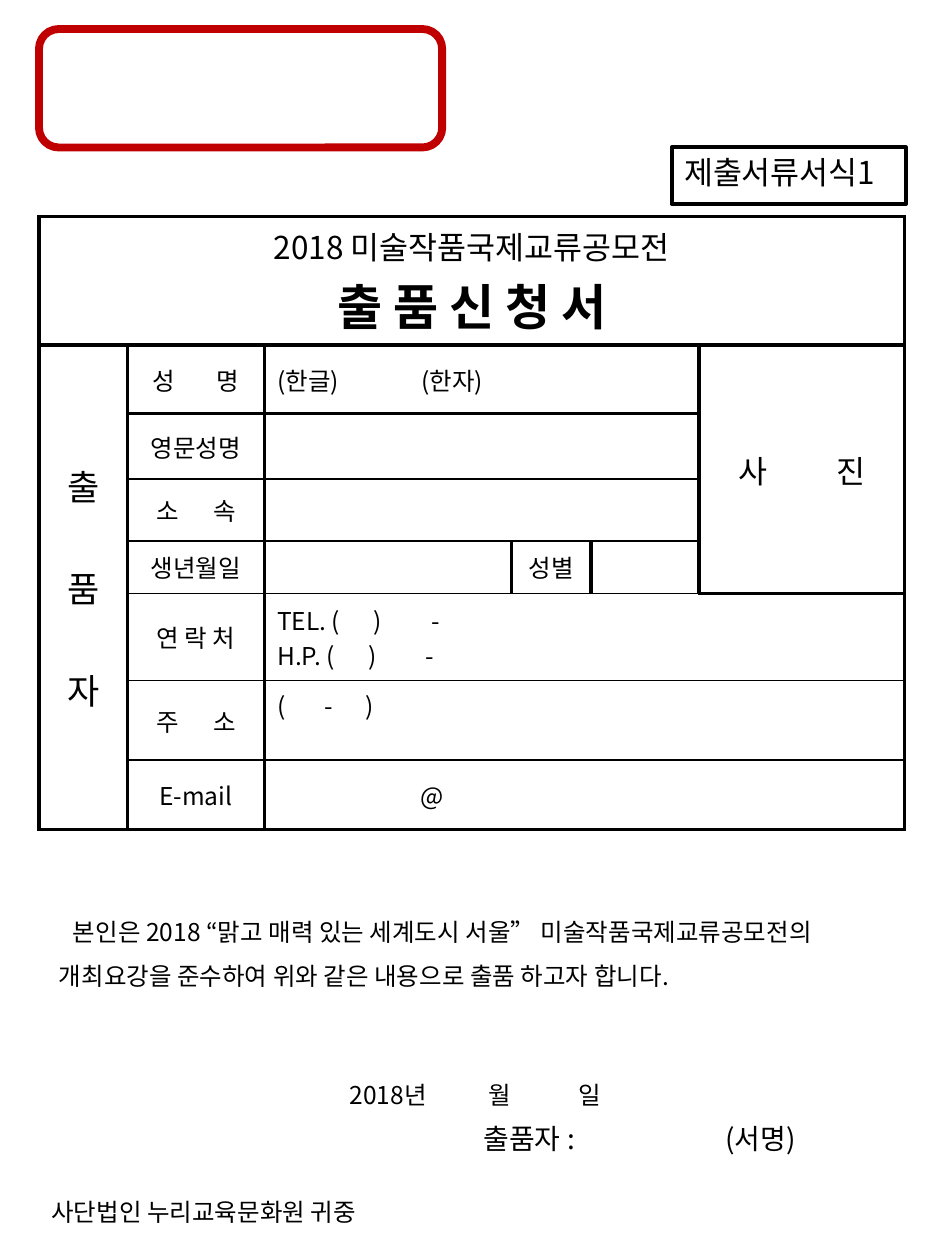
from pptx import Presentation
from pptx.dml.color import RGBColor
from pptx.enum.shapes import MSO_SHAPE
from pptx.enum.text import MSO_ANCHOR, PP_ALIGN
from pptx.oxml.ns import qn
from pptx.util import Pt
from lxml.etree import SubElement
from dataclasses import dataclass

RECT, ROUND = MSO_SHAPE.RECTANGLE, MSO_SHAPE.ROUNDED_RECTANGLE
LEFT, MID = PP_ALIGN.LEFT, PP_ALIGN.CENTER
TOP, CENTER = MSO_ANCHOR.TOP, MSO_ANCHOR.MIDDLE


@dataclass(frozen=True)
class Theme:
    font: str = "Noto Sans CJK KR"
    ink: str = "000000"
    red: str = "C00000"
    body: int = 14
    sign: int = 16
    head: int = 18
    side: int = 20
    title: int = 28
    thin: float = 1
    thick: float = 2.25
    frame: float = 4.5
    space: float = 0.22


T = Theme()


def para(*parts, size=T.body, **look):
    return dict(parts=parts, size=size, **look)


COLS = [50.4, 78.5, 141.1, 45.4, 61.9, 117.4]
ROWS = [73.4, 39.2, 37.4, 35.3, 30.2, 49.7, 45.4, 39.6]
BOLD = {0, 1, 2, 8}
GRID = (22.3, 123.8)

CELLS = [
    (0, 0, 1, 6, MID, [para("2018 미술작품국제교류공모전", size=T.head),
                       para("출 품 신 청 서", size=T.title, bold=True)]),
    (1, 0, 7, 1, MID, [para("출", size=T.side)] +
     [para(word, size=T.side, before=29) for word in "품자"]),
    (1, 1, 1, 1, MID, [para("성", 23.5, "명")]),
    (1, 2, 1, 3, LEFT, [para("(한글)", 47, "(한자)")]),
    (1, 5, 4, 1, MID, [para("사", 39, "진", size=T.head)]),
    (2, 1, 1, 1, MID, [para("영문성명")]),
    (2, 2, 1, 3, LEFT, []),
    (3, 1, 1, 1, MID, [para("소", 19.5, "속")]),
    (3, 2, 1, 3, LEFT, []),
    (4, 1, 1, 1, MID, [para("생년월일")]),
    (4, 2, 1, 1, LEFT, []),
    (4, 3, 1, 1, MID, [para("성별")]),
    (4, 4, 1, 1, LEFT, []),
    (5, 1, 1, 1, MID, [para("연 락 처")]),
    (5, 2, 1, 4, LEFT, [para(name + " (", 19, ")", 28, "-")
                        for name in ("TEL.", "H.P.")]),
    (6, 1, 1, 1, MID, [para("주", 19.5, "소")]),
    (6, 2, 1, 4, LEFT, [para("(", 22, "-", 19, ")")]),
    (7, 1, 1, 1, MID, [para("E-mail")]),
    (7, 2, 1, 4, LEFT, [para("@", margin=82)]),
]
HIGH = {(6, 2)}

LABEL = ((383.8, 84.2, 133.9, 28.8), LEFT,
         [para("제출서류서식1", size=T.head)])
NOTES = [
    ((26.6, 511.9, 489.6, 58.3), LEFT, [
        para("본인은 2018 “맑고 매력 있는 세계도시 서울” 미술작품국제교류공모전의",
             lines=1.5, indent=8),
        para("개최요강을 준수하여 위와 같은 내용으로 출품 하고자 합니다.", lines=1.5)]),
    ((175, 613.4, 187.2, 24.5), MID,
     [para("2018년", 35, "월", 38.5, "일", margin=6)]),
    ((22.3, 680.4, 207.4, 24.5), LEFT, [para("사단법인 누리교육문화원 귀중")]),
    ((269.3, 637.2, 248.4, 26.6), LEFT,
     [para("출품자 :", 86, "(서명)", size=T.sign)]),
]


def add_run(line, part, look):
    run = line.add_run()
    gap = not isinstance(part, str)
    run.text = " " if gap else part
    font = run.font
    font.size, font.bold = Pt(look["size"]), look.get("bold", False)
    font.color.rgb = RGBColor.from_string(T.ink)
    font.name = T.font
    props = run._r.get_or_add_rPr()
    SubElement(props, qn("a:ea"), typeface=T.font)
    if gap:
        props.set("spc", str(round((part - T.space * look["size"]) * 100)))


def fill_text(frame, paras, align):
    for i, look in enumerate(paras):
        line = frame.add_paragraph() if i else frame.paragraphs[0]
        line.alignment = align
        if "before" in look:
            line.space_before = Pt(look["before"])
        if "lines" in look:
            line.line_spacing = look["lines"]
        for key, attr in (("margin", "marL"), ("indent", "indent")):
            if key in look:
                line._p.get_or_add_pPr().set(attr, str(Pt(look[key])))
        for part in look["parts"]:
            add_run(line, part, look)


def add_text(slide, area, align, paras):
    frame = slide.shapes.add_textbox(*map(Pt, area)).text_frame
    frame.word_wrap = True
    fill_text(frame, paras, align)


def add_box(slide, kind, area, color, width):
    shape = slide.shapes.add_shape(kind, *map(Pt, area))
    shape.shadow.inherit = False
    shape.fill.background()
    shape.line.color.rgb = RGBColor.from_string(color)
    shape.line.width = Pt(width)


def rule(cell, side, width):
    line = SubElement(cell._tc.get_or_add_tcPr(), qn("a:ln" + side),
                      w=str(Pt(width)))
    fill = SubElement(line, qn("a:solidFill"))
    SubElement(fill, qn("a:srgbClr"), val=T.ink)


def level(row, col):
    return T.thick if row in BOLD or (row, col) == (5, 5) else T.thin


def add_form(slide):
    area = (*GRID, sum(COLS), sum(ROWS))
    table = slide.shapes.add_table(len(ROWS), len(COLS), *map(Pt, area)).table
    table.first_row = table.horz_banding = False
    for col, width in zip(table.columns, COLS):
        col.width = Pt(width)
    for row, height in zip(table.rows, ROWS):
        row.height = Pt(height)
    for top, left, high, wide, align, paras in CELLS:
        end, edge = top + high, left + wide
        for r in range(top, end):
            for c in range(left, edge):
                cell = table.cell(r, c)
                first = (r, c) == (top, left)
                sides = [("L", c == left, T.thick),
                         ("R", c + 1 == edge, T.thick),
                         ("T", r == top, level(top, c)),
                         ("B", r + 1 == end, level(end, c))]
                for side, outer, width in sides:
                    if first or outer:
                        rule(cell, side, width)
                cell.fill.background()
        cell = table.cell(top, left)
        if high * wide > 1:
            cell.merge(table.cell(end - 1, edge - 1))
        cell.vertical_anchor = TOP if (top, left) in HIGH else CENTER
        fill_text(cell.text_frame, paras, align)


def main():
    deck = Presentation()
    deck.slide_width, deck.slide_height = Pt(540), Pt(720)
    slide = deck.slides.add_slide(deck.slide_layouts[6])
    add_text(slide, *LABEL)
    add_box(slide, RECT, (383.8, 84.2, 133.9, 32.4), T.ink, T.thick)
    add_form(slide)
    for note in NOTES:
        add_text(slide, *note)
    add_box(slide, ROUND, (22.3, 16.6, 230.4, 67.7), T.red, T.frame)
    deck.save("out.pptx")


if __name__ == "__main__":
    main()
